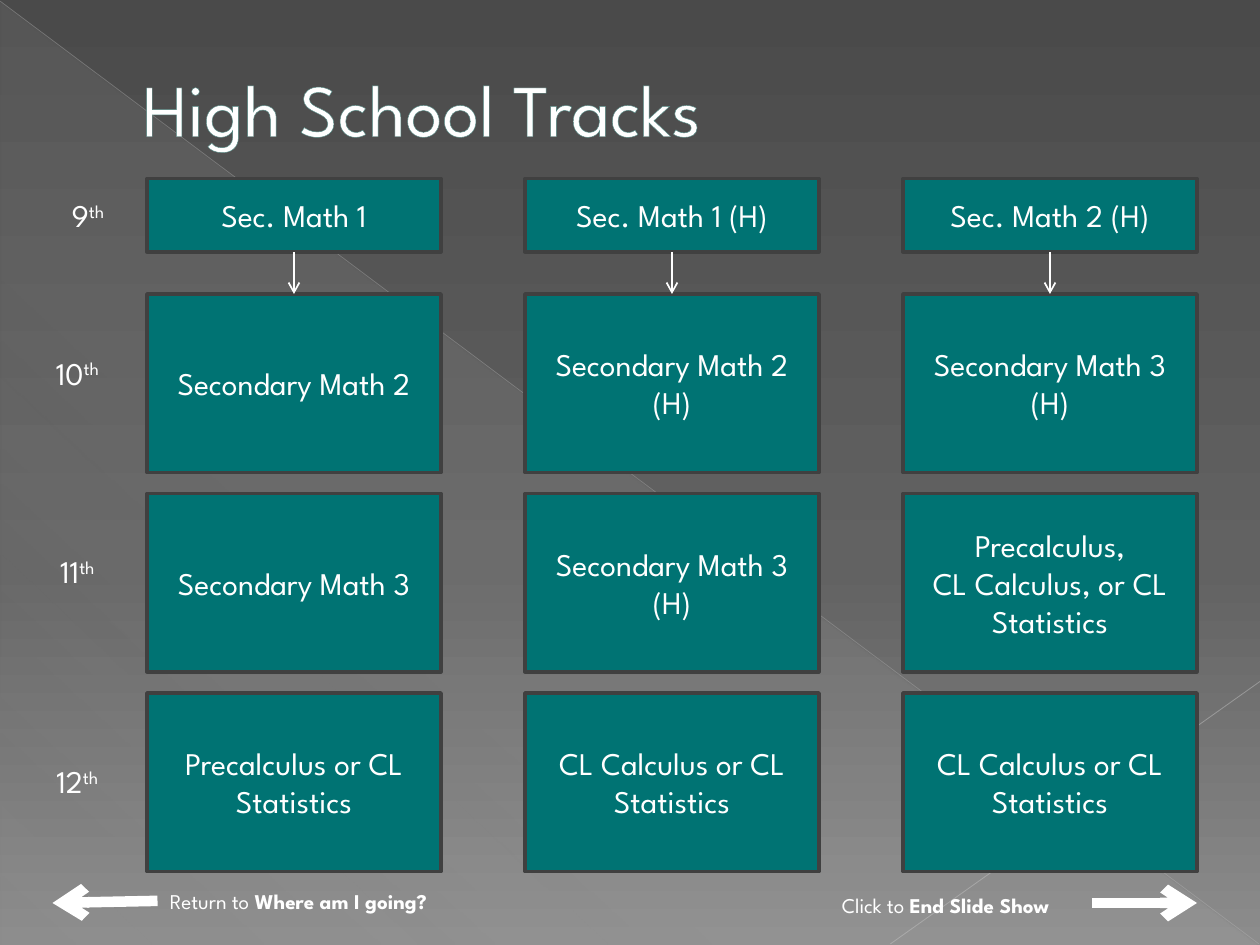
from pptx import Presentation
from pptx.dml.color import RGBColor
from pptx.enum.shapes import MSO_CONNECTOR, MSO_SHAPE
from pptx.enum.text import MSO_ANCHOR, PP_ALIGN
from pptx.oxml import parse_xml
from pptx.oxml.ns import nsdecls
from pptx.util import Inches, Pt

STRAIGHT = MSO_CONNECTOR.STRAIGHT
RECTANGLE, TRIANGLE = MSO_SHAPE.RECTANGLE, MSO_SHAPE.RIGHT_TRIANGLE
MIDDLE, TOP = MSO_ANCHOR.MIDDLE, MSO_ANCHOR.TOP
LEFT, CENTER = PP_ALIGN.LEFT, PP_ALIGN.CENTER
BOTTOM_SIDE, TOP_SIDE = 2, 0
TITLE_ONLY = 5


def color(value):
    return RGBColor.from_string(value)


def element(tag, content=""):
    """Build a drawing element; tag may carry attributes."""
    name = tag.split()[0]
    return parse_xml(f"<a:{tag} {nsdecls('a')}>{content}</a:{name}>")


class TrackSlide:
    """Places elements on a grid of 12 cells to the inch."""

    FONT, WHITE, TEAL, EDGE = "League Spartan", "FFFFFF", "007373", "404040"

    def __init__(self, deck):
        self.slide = deck.slides.add_slide(deck.slide_layouts[TITLE_ONLY])
        self.shapes = self.slide.shapes

    def cells(self, *counts):
        return [Inches(count / 12) for count in counts]

    def gradient(self, fill, owner, stops, angle):
        """Stops are (percent, colour, opacity percent); angle is clockwise."""
        fill.gradient()
        fill.gradient_angle = 360 - angle
        stop_list = owner.xpath(".//a:gsLst")[0]
        for old in list(stop_list):
            stop_list.remove(old)
        for position, value, opacity in stops:
            stop_list.append(element(
                f'gs pos="{position * 1000}"',
                f'<a:srgbClr val="{value}"><a:alpha val="{opacity * 1000}"/></a:srgbClr>'))

    def style(self, para, size, align):
        para.alignment = align
        for span in para.runs:
            span.font.name, span.font.size = self.FONT, Pt(size)
            span.font.color.rgb = color(self.WHITE)

    def title(self, text, area, indent):
        title = self.shapes.title
        title.left, title.top, title.width, title.height = self.cells(*area)
        title.text_frame.text = text
        title.text_frame.vertical_anchor = MIDDLE
        para = title.text_frame.paragraphs[0]
        self.style(para, 42, LEFT)
        para._p.get_or_add_pPr().set("marL", str(Inches(indent)))
        para.runs[0].font._element.insert(0, element(
            f'ln w="{Pt(0.5)}"',
            '<a:solidFill><a:srgbClr val="528681"/></a:solidFill>'))
        self.shapes._spTree.append(title.element)  # in front of the backdrop

    def triangle(self, area, stops, angle):
        shape = self.shapes.add_shape(TRIANGLE, *self.cells(*area))
        shape.shadow.inherit = False
        shape.line.fill.background()
        self.gradient(shape.fill, shape.element, stops, angle)

    def box(self, text, area):
        box = self.shapes.add_shape(RECTANGLE, *self.cells(*area))
        box.shadow.inherit = False
        box.fill.solid()
        box.fill.fore_color.rgb = color(self.TEAL)
        box.line.color.rgb, box.line.width = color(self.EDGE), Pt(2)
        frame = box.text_frame
        frame.text, frame.word_wrap, frame.vertical_anchor = text, True, MIDDLE
        for para in frame.paragraphs:
            self.style(para, 18, CENTER)
        return box

    def label(self, spans, area, size, align):
        """Place one line of text and return its runs."""
        frame = self.shapes.add_textbox(*self.cells(*area)).text_frame
        frame.word_wrap, frame.vertical_anchor = True, TOP
        para = frame.paragraphs[0]
        for text in spans:
            para.add_run().text = text
        self.style(para, size, align)
        return para.runs

    def line(self, start, end, width, value=WHITE, opacity=100, arrow=False):
        line = self.shapes.add_connector(STRAIGHT, *self.cells(*start, *end))
        line.line.color.rgb, line.line.width = color(value), Pt(width)
        if opacity < 100:
            line.element.xpath(".//a:ln//a:srgbClr")[0].append(
                element(f'alpha val="{opacity * 1000}"'))
        if arrow:
            line.line._get_or_add_ln().append(element('tailEnd type="arrow"'))
        line.element.spPr.append(element("effectLst"))
        return line

    def join(self, upper, lower):
        arrow = self.line((0, 0), (1, 1), 1, arrow=True)
        arrow.begin_connect(upper, BOTTOM_SIDE)
        arrow.end_connect(lower, TOP_SIDE)


def main():
    deck = Presentation()
    deck.slide_width, deck.slide_height = Inches(10), Inches(7.5)
    page = TrackSlide(deck)

    # Backdrop
    page.gradient(page.slide.background.fill, page.slide.element,
                  [(0, "4A4A4A", 100), (60, "626262", 100), (100, "8C8C8C", 100)], 90)
    page.triangle((0.1, 0.2, 119.8, 89.8),
                  [(0, "D2D2D2", 10), (70, "D2D2D2", 8), (100, "D2D2D2", 1)], 133)
    page.line((0, 0.1), (119.9, 89.9), 0.39, "BFBFBF", 35)
    page.line((120, 64.9), (84.8, 89.9), 0.47, "C6C6C6", 45)

    page.title("High School Tracks", (6, 1, 108, 18.4), 0.53)

    # Course grid: one column per track, one row per grade (CL: college level)
    tracks = [
        ["Sec. Math 1", "Secondary Math 2", "Secondary Math 3",
         "Precalculus or CL Statistics"],
        ["Sec. Math 1 (H)", "Secondary Math 2 (H)", "Secondary Math 3 (H)",
         "CL Calculus or CL Statistics"],
        ["Sec. Math 2 (H)", "Secondary Math 3 (H)",
         "Precalculus,\nCL Calculus, or CL Statistics",
         "CL Calculus or CL Statistics"],
    ]
    rows = [(17, 7), (28, 17), (47, 17), (66, 17)]  # top, height
    for column, courses in enumerate(tracks):
        boxes = [page.box(course, (14 + 36 * column, top, 28, height))
                 for course, (top, height) in zip(courses, rows)]
        page.join(boxes[0], boxes[1])

    # Grade labels
    grades = [(" 9", 4, 18.1, 8), (" 10", 1, 33.1, 12),
              (" 11", 1, 52, 12), (" 12", 1, 72, 12)]
    for grade, left, top, width in grades:
        suffix = page.label((grade, "th"), (left, top, width, 4.8), 18, CENTER)[1]
        suffix.font._element.set("baseline", "30000")

    # Navigation
    links = [
        ("Return to ", "Where am I going?", (15, 84, 35, 3.6), (15, 85.8), (5, 86)),
        ("Click to ", "End Slide Show", (79, 84.4, 32, 3.6), (104, 86), (114, 86)),
    ]
    for lead, target, area, start, end in links:
        page.label((lead, target), area, 12, LEFT)[1].font.bold = True
        page.line(start, end, 6, arrow=True)

    deck.save("out.pptx")


if __name__ == "__main__":
    main()
